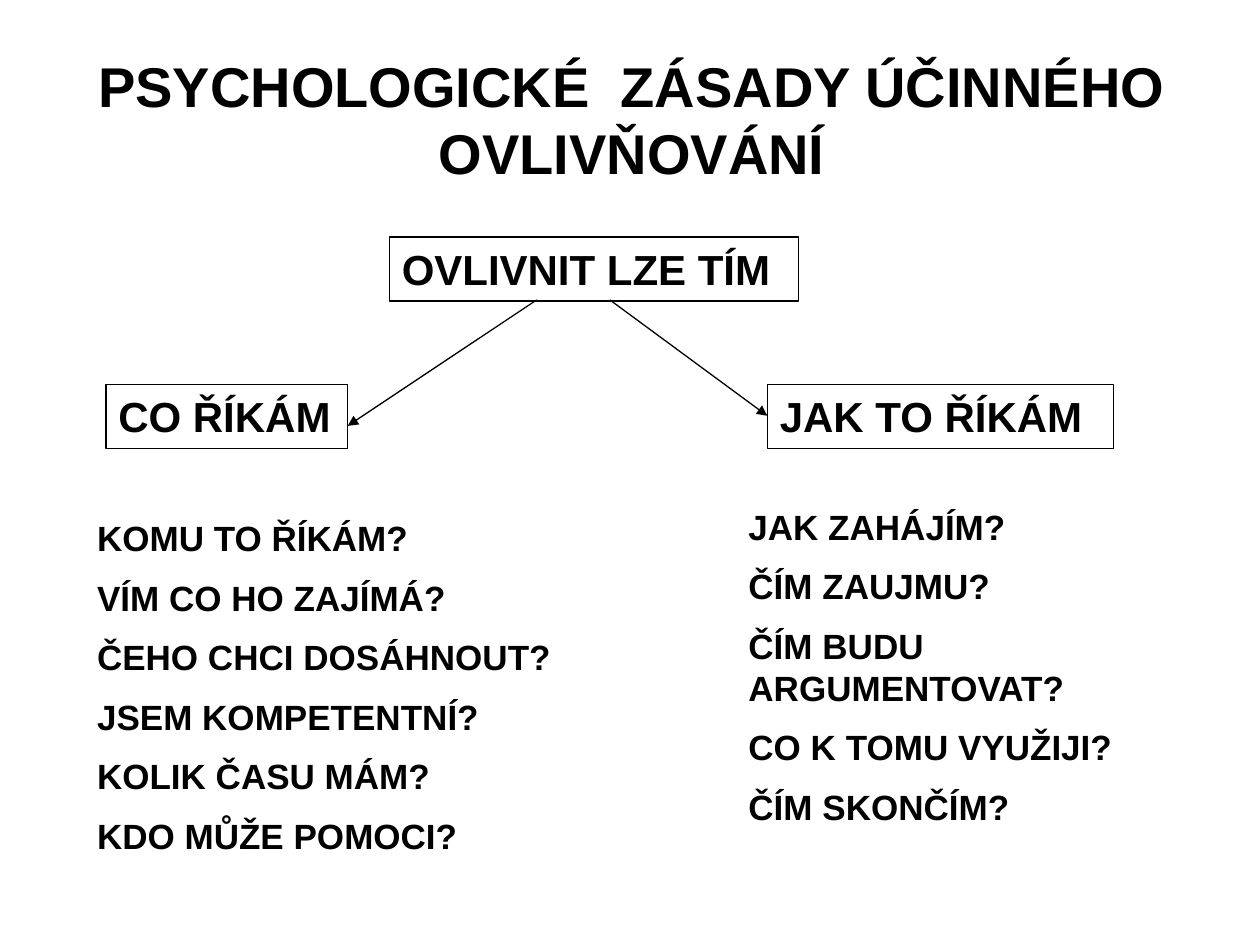
from lxml.etree import SubElement
from pptx import Presentation
from pptx.dml.color import RGBColor
from pptx.enum.shapes import MSO_CONNECTOR, MSO_SHAPE
from pptx.enum.text import MSO_ANCHOR, MSO_AUTO_SIZE, PP_ALIGN
from pptx.oxml.ns import qn
from pptx.util import Inches, Pt

BLACK = RGBColor(0, 0, 0)
FONT = "Arial"
COLS, ROWS = 100, 75
WIDE, HIGH = Inches(10), Inches(7.5)

HEAD = "PSYCHOLOGICKÉ  ZÁSADY ÚČINNÉHO OVLIVŇOVÁNÍ"
ROOT = "OVLIVNIT LZE TÍM"
WHAT = "CO ŘÍKÁM"
HOW = "JAK TO ŘÍKÁM"
WHAT_ASKS = ["KOMU TO ŘÍKÁM?", "VÍM CO HO ZAJÍMÁ?", "ČEHO CHCI DOSÁHNOUT?",
             "JSEM KOMPETENTNÍ?", "KOLIK ČASU MÁM?", "KDO MŮŽE POMOCI?"]
HOW_ASKS = ["JAK ZAHÁJÍM?", "ČÍM ZAUJMU?", "ČÍM BUDU ARGUMENTOVAT?",
            "CO K TOMU VYUŽIJI?", "ČÍM SKONČÍM?"]


def grid(col, row):
    """Turn grid columns and rows into slide lengths."""
    return int(WIDE * col / COLS), int(HIGH * row / ROWS)


def place(shape, box):
    shape.left, shape.top = grid(*box[:2])
    shape.width, shape.height = grid(*box[2:])


def write(shape, *lines, size, align=PP_ALIGN.LEFT):
    """Fill a shape with bold lines, half a line apart, without bullets."""
    frame = shape.text_frame
    frame.text = "\n".join(lines)
    frame.word_wrap = True
    frame.auto_size = MSO_AUTO_SIZE.NONE
    frame.vertical_anchor = MSO_ANCHOR.TOP
    for i, para in enumerate(frame.paragraphs):
        para.alignment = align
        para.space_before = Pt(size / 2 if i else 0)
        props = para._p.get_or_add_pPr()
        props.set("marL", "0")
        props.set("indent", "0")
        SubElement(props, qn("a:buNone"))
        font = para.runs[0].font
        font.name, font.size, font.bold = FONT, Pt(size), True
        font.color.rgb = BLACK


def title(slide, box):
    place(slide.shapes.title, box)
    write(slide.shapes.title, HEAD, size=32, align=PP_ALIGN.CENTER)


def asks(slide, slot, box, lines):
    """Put a list of questions in a body placeholder."""
    body = slide.placeholders[slot]
    place(body, box)
    write(body, *lines, size=20)


def node(slide, box, text):
    shape = slide.shapes.add_shape(MSO_SHAPE.RECTANGLE, 0, 0, 0, 0)
    place(shape, box)
    shape.shadow.inherit = False
    shape.fill.background()
    shape.line.color.rgb = BLACK
    shape.line.width = Pt(0.75)
    write(shape, text, size=24)


def arrow(slide, start, end):
    link = slide.shapes.add_connector(MSO_CONNECTOR.STRAIGHT,
                                      *grid(*start), *grid(*end))
    link.line.color.rgb = BLACK
    link.line.width = Pt(0.75)
    SubElement(link.line._get_or_add_ln(), qn("a:tailEnd"), type="triangle")
    SubElement(link._element.spPr, qn("a:effectLst"))


def tree(slide, box):
    """Draw the root node and its two branches inside the box."""
    left, top, wide, high = box
    tall = 5.1
    low = top + high - tall
    right = left + wide
    node(slide, (left + 22.5, top, 32.5, tall), ROOT)
    node(slide, (left, low, 19.2, tall), WHAT)
    node(slide, (right - 27.5, low, 27.5, tall), HOW)
    base = top + 5
    arrow(slide, (left + 34.2, base), (left + 19.2, low + 3.3))
    arrow(slide, (left + 40, base), (right - 27.5, low + 2.5))


def main():
    deck = Presentation()
    deck.slide_width, deck.slide_height = WIDE, HIGH
    slide = deck.slides.add_slide(deck.slide_layouts.get_by_name("Two Content"))
    title(slide, (3.5, 3.6, 93.3, 11.7))
    tree(slide, (8.4, 18.8, 80, 16.8))
    asks(slide, 1, (6.7, 40.5, 39.2, 29.3), WHAT_ASKS)
    asks(slide, 2, (58.4, 39.6, 35, 27.7), HOW_ASKS)
    deck.save("out.pptx")


if __name__ == "__main__":
    main()
